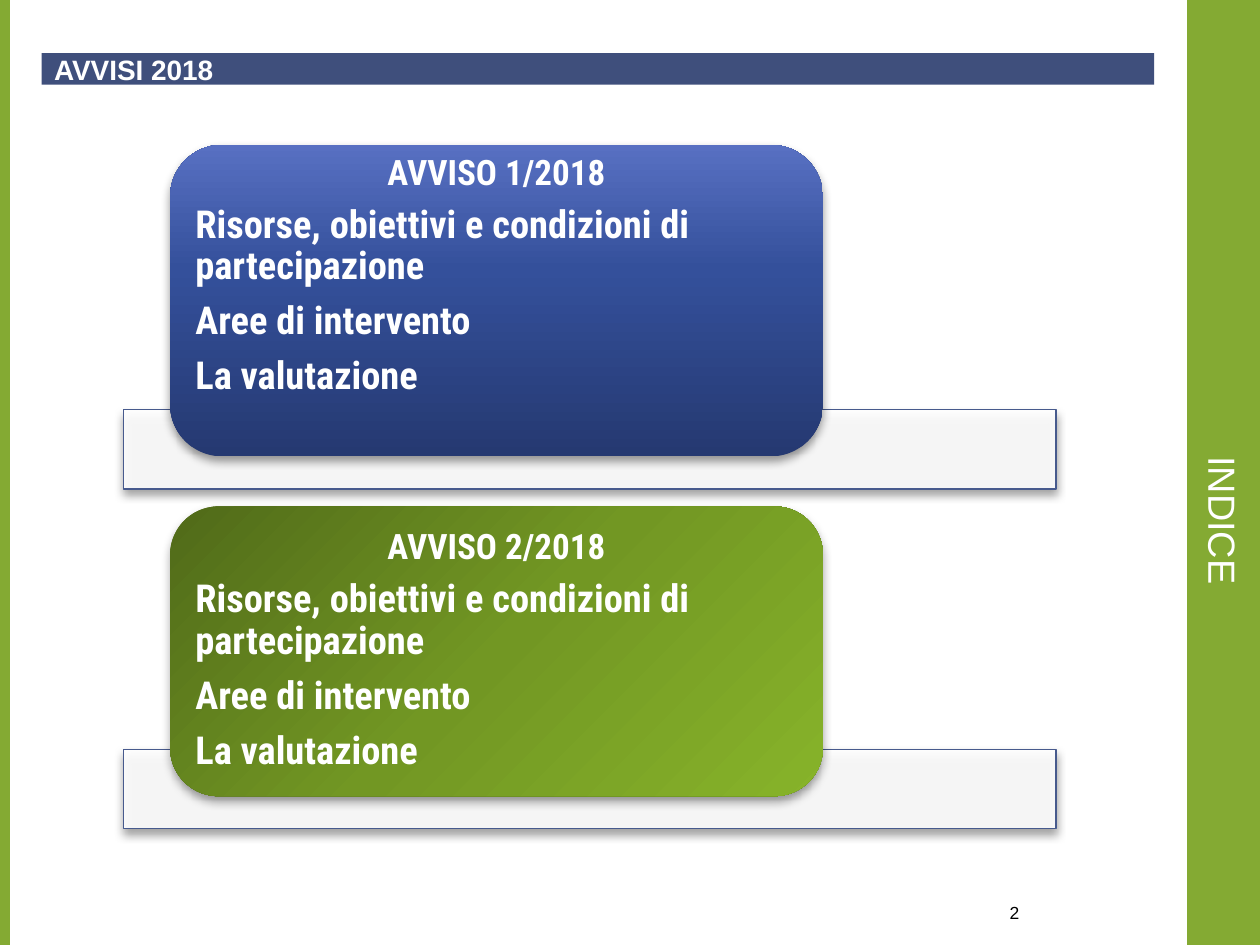
from lxml import etree
from pptx import Presentation
from pptx.dml.color import RGBColor
from pptx.enum.shapes import MSO_SHAPE as Shape
from pptx.enum.text import MSO_ANCHOR as Anchor, PP_ALIGN as Align
from pptx.oxml import parse_xml
from pptx.oxml.ns import nsdecls, qn
from pptx.util import Cm, Pt

GREEN, NAVY, OUTLINE, WHITE = "84AA33", "3F4F7C", "475A8D", "FFFFFF"
PAGE_WIDTH, PAGE_HEIGHT = 25.4, 19.05
TOPICS = ["Risorse, obiettivi e condizioni di partecipazione",
          "Aree di intervento", "La valutazione"]


def color(code):
    return RGBColor.from_string(code)


def add_block(page, kind, box, fill=None, line=None):
    block = page.shapes.add_shape(kind, *map(Cm, box))
    block.shadow.inherit = False
    if fill:
        block.fill.solid()
        block.fill.fore_color.rgb = color(fill)
    if line:
        block.line.color.rgb = color(line)
        block.line.width = Pt(0.75)
    else:
        block.line.fill.background()
    return block


def set_frame(shape, insets=(0.25, 0.13, 0.25, 0.13)):
    frame = shape.text_frame
    frame.word_wrap = True
    frame.vertical_anchor = Anchor.MIDDLE
    (frame.margin_left, frame.margin_top,
     frame.margin_right, frame.margin_bottom) = map(Cm, insets)
    return frame


def add_text_box(page, box, **options):
    return set_frame(page.shapes.add_textbox(*map(Cm, box)), **options)


def add_span(para, text, size, code=WHITE, font="Arial", bold=False, align=Align.LEFT):
    para.alignment = align
    span = para.add_run()
    span.text = text
    span.font.name, span.font.size, span.font.bold = font, Pt(size), bold
    span.font.color.rgb = color(code)


def drop_shadow(shape):
    effects = shape._element.spPr.find(qn("a:effectLst"))
    effects.append(parse_xml(
        f'<a:outerShdw {nsdecls("a")} blurRad="{Pt(5.2)}" dist="{Pt(3)}" '
        'dir="5400000" rotWithShape="0"><a:srgbClr val="000000">'
        '<a:alpha val="40000"/></a:srgbClr></a:outerShdw>'))


def set_gradient(shape, stops, angle):
    marks = "".join(f'<a:gs pos="{place * 1000}"><a:srgbClr val="{code}"/></a:gs>'
                    for place, code in stops)
    gradient = parse_xml(
        f'<a:gradFill {nsdecls("a")} rotWithShape="1"><a:gsLst>{marks}</a:gsLst>'
        f'<a:lin ang="{angle * 60000}" scaled="0"/></a:gradFill>')
    properties = shape._element.spPr
    properties.replace(properties.find(qn("a:solidFill")), gradient)


def add_side_bars(page, box):
    left, top, width, height = box
    bar = 1.47
    bar_left = left + width - bar
    add_block(page, Shape.RECTANGLE, (bar_left, top, bar, height), GREEN)
    add_block(page, Shape.RECTANGLE, (left, top, 0.2, height), GREEN)

    # Vertical title, shifted down from the middle of the bar
    frame = add_text_box(page, (bar_left, top + 1.07, bar, 16.3))
    frame._txBody.bodyPr.set("vert", "vert")
    para = frame.paragraphs[0]
    para._p.get_or_add_pPr().set("marL", str(Cm(2.54)))
    add_span(para, "INDICE", 21.6, align=Align.CENTER)


def add_banner(page, box):
    frame = set_frame(add_block(page, Shape.RECTANGLE, box, NAVY))
    add_span(frame.paragraphs[0], "AVVISI 2018", 16, bold=True)


def add_notice(page, box, heading, stops, angle, bottom_inset=0):
    left, top, width, height = box

    # Translucent shelf along the foot
    shelf = add_block(page, Shape.RECTANGLE,
                      (left, top + height - 1.6, width, 1.6), WHITE, OUTLINE)
    tint = shelf._element.spPr.find(qn("a:solidFill"))[0]
    etree.SubElement(tint, qn("a:alpha")).set("val", "90000")
    drop_shadow(shelf)

    # Card standing on the shelf
    card_box = (left + width * 0.05, top, width * 0.7, height - 0.66)
    card = add_block(page, Shape.ROUNDED_RECTANGLE, card_box, stops[0][1])
    set_gradient(card, stops, angle)
    drop_shadow(card)

    # Heading and topics
    frame = add_text_box(page, card_box, insets=(0.51, 0, 0.51, bottom_inset))
    for index, text in enumerate([heading, *TOPICS]):
        para = frame.add_paragraph() if index else frame.paragraphs[0]
        size = 22 if index else 20
        para.line_spacing = 0.9
        para.space_after = Pt(size * 0.35)
        add_span(para, text, size, font="Roboto Condensed", bold=True,
                 align=Align.LEFT if index else Align.CENTER)


def add_page_number(page, box):
    frame = add_text_box(page, box)
    add_span(frame.paragraphs[0], "2", 10, "000000", align=Align.RIGHT)


def main():
    deck = Presentation()
    deck.slide_width, deck.slide_height = Cm(PAGE_WIDTH), Cm(PAGE_HEIGHT)
    page = deck.slides.add_slide(deck.slide_layouts[6])

    add_side_bars(page, (0, 0, PAGE_WIDTH, PAGE_HEIGHT))
    add_page_number(page, (18.06, 17.98, 2.74, 0.84))
    add_notice(page, (2.49, 2.92, 18.8, 6.94), "AVVISO 1/2018",
               [(0, "253971"), (60, "34509B"), (100, "5870C2")], 270,
               bottom_inset=0.97)
    add_notice(page, (2.49, 10.21, 18.8, 6.5), "AVVISO 2/2018",
               [(0, "506A19"), (50, "729723"), (100, "87B32A")], 45)
    add_banner(page, (0.84, 1.07, 22.43, 0.64))
    deck.save("out.pptx")


if __name__ == "__main__":
    main()
